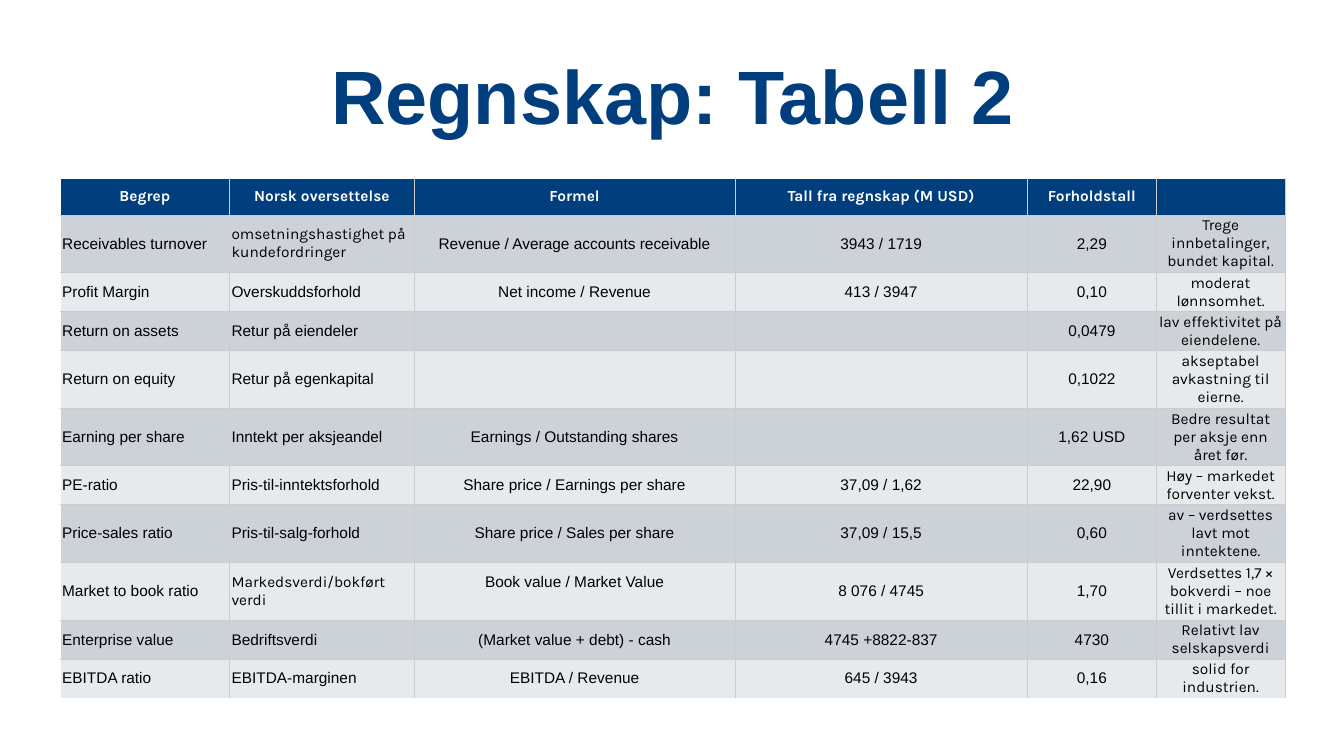
"""Build the slide with the table of accounting ratios."""
from dataclasses import dataclass

from lxml import etree
from pptx import Presentation
from pptx.dml.color import RGBColor
from pptx.enum.text import MSO_ANCHOR, PP_ALIGN
from pptx.oxml.ns import qn
from pptx.util import Pt

LEFT, CENTER = PP_ALIGN.LEFT, PP_ALIGN.CENTER
MIDDLE, BOTTOM = MSO_ANCHOR.MIDDLE, MSO_ANCHOR.BOTTOM


@dataclass(frozen=True)
class Theme:
    navy: str = "003E7E"
    white: str = "FFFFFF"
    black: str = "000000"
    grid: str = "CCCCCC"
    bands: tuple = ("E7EAED", "CCD2D8")
    plain_font: str = "Arial"
    accent_font: str = "Karla"
    title_size: float = 54
    table_size: float = 11
    border_width: float = 0.38


theme = Theme()

ROWS = [
    ("Begrep", "Norsk oversettelse", "Formel", "Tall fra regnskap (M USD)", "Forholdstall", ""),
    ("Receivables turnover", "omsetningshastighet på kundefordringer",
     "Revenue / Average accounts receivable", "3943 / 1719", "2,29",
     "Trege innbetalinger, bundet kapital."),
    ("Profit Margin", "Overskuddsforhold", "Net income / Revenue", "413 / 3947", "0,10",
     "moderat lønnsomhet."),
    ("Return on assets", "Retur på eiendeler", "", "", "0,0479",
     "lav effektivitet på eiendelene."),
    ("Return on equity", "Retur på egenkapital", "", "", "0,1022",
     "akseptabel avkastning til eierne."),
    ("Earning per share", "Inntekt per aksjeandel", "Earnings / Outstanding shares", "",
     "1,62 USD", "Bedre resultat per aksje enn året før."),
    ("PE-ratio", "Pris-til-inntektsforhold", "Share price / Earnings per share",
     "37,09 / 1,62", "22,90", "Høy – markedet forventer vekst."),
    ("Price-sales ratio", "Pris-til-salg-forhold", "Share price / Sales per share",
     "37,09 / 15,5", "0,60", "av – verdsettes lavt mot inntektene."),
    ("Market to book ratio", "Markedsverdi/bokført verdi", "Book value / Market Value",
     "8 076 / 4745", "1,70", "Verdsettes 1,7 × bokverdi – noe tillit i markedet."),
    ("Enterprise value", "Bedriftsverdi", "(Market value + debt) - cash",
     "4745 +8822-837", "4730", "Relativt lav selskapsverdi"),
    ("EBITDA ratio", "EBITDA-marginen", "EBITDA / Revenue", "645 / 3943", "0,16",
     "solid for industrien."),
]
COLUMN_WIDTHS = (121, 132, 229, 209, 92, 92)
HEADER_HEIGHT, TWO_LINES, THREE_LINES = 26.5, 27.8, 41.3
TALL_ROWS = (1, 4, 7, 8)
ACCENT_TRANSLATIONS = (1, 8)
RAISED_CELL = (8, 2)


def add_text(paragraph, text, font_name, size, color, bold, alignment):
    paragraph.alignment = alignment
    run = paragraph.add_run()
    run.text = text
    run.font.name = font_name
    run.font.size = Pt(size)
    run.font.bold = bold
    run.font.color.rgb = RGBColor.from_string(color)


def add_border(cell, side, color):
    properties = cell._tc.get_or_add_tcPr()
    line = etree.SubElement(properties, qn(f"a:{side}"), w=str(Pt(theme.border_width)))
    fill = etree.SubElement(line, qn("a:solidFill"))
    etree.SubElement(fill, qn("a:srgbClr"), val=color)


presentation = Presentation()
presentation.slide_width, presentation.slide_height = Pt(960), Pt(540)
slide = presentation.slides.add_slide(presentation.slide_layouts[6])

title_box = slide.shapes.add_textbox(Pt(43.2), Pt(30.2), Pt(875), Pt(72.8))
title_frame = title_box.text_frame
title_frame.word_wrap = True
title_frame.vertical_anchor = BOTTOM
add_text(title_frame.paragraphs[0], "Regnskap: Tabell 2", theme.plain_font,
         theme.title_size, theme.navy, True, CENTER)

row_heights = [HEADER_HEIGHT] + [
    THREE_LINES if row in TALL_ROWS else TWO_LINES for row in range(1, len(ROWS))
]
table = slide.shapes.add_table(
    len(ROWS), len(COLUMN_WIDTHS), Pt(43), Pt(127), Pt(sum(COLUMN_WIDTHS)), Pt(sum(row_heights))
).table
for column, width in zip(table.columns, COLUMN_WIDTHS):
    column.width = Pt(width)
for table_row, height in zip(table.rows, row_heights):
    table_row.height = Pt(height)

last_row, last_column = len(ROWS) - 1, len(COLUMN_WIDTHS) - 1
for row, texts in enumerate(ROWS):
    header = row == 0
    for column, text in enumerate(texts):
        cell = table.cell(row, column)
        cell.vertical_anchor = MIDDLE
        cell.margin_left = cell.margin_right = Pt(1.4)
        cell.margin_top = cell.margin_bottom = Pt(0.7)
        if (row, column) == RAISED_CELL:
            cell.margin_bottom = Pt(13.4)

        for side, outer in (("lnL", column == 0), ("lnR", False),
                            ("lnT", header), ("lnB", row == last_row)):
            add_border(cell, side, theme.white if outer else theme.grid)
        cell.fill.solid()
        cell.fill.fore_color.rgb = RGBColor.from_string(
            theme.navy if header else theme.bands[row % 2])

        if text:
            accent = (header or column == last_column
                      or (column == 1 and row in ACCENT_TRANSLATIONS))
            add_text(cell.text_frame.paragraphs[0], text,
                     theme.accent_font if accent else theme.plain_font,
                     theme.table_size, theme.white if header else theme.black,
                     header, CENTER if header or column > 1 else LEFT)

presentation.save("out.pptx")
